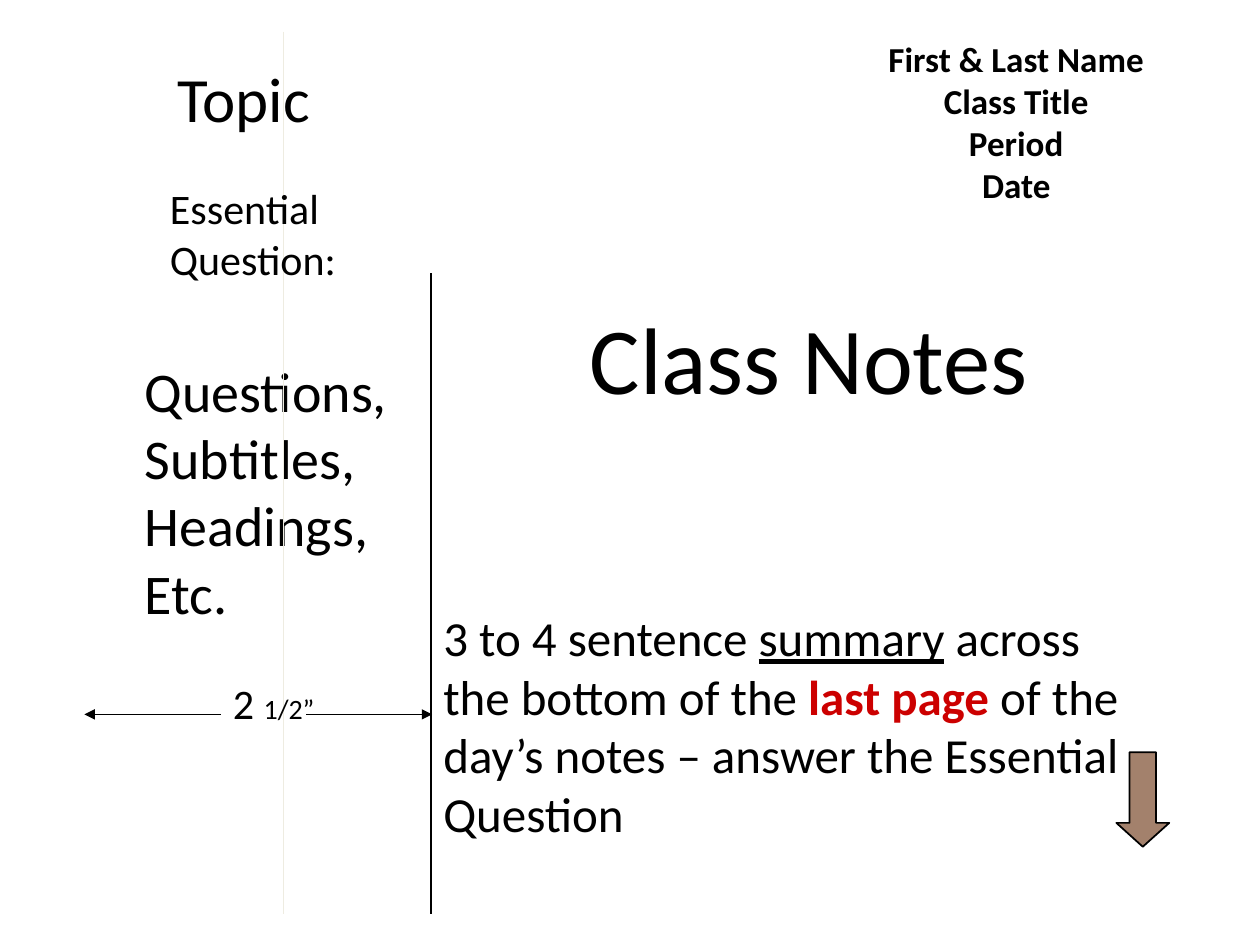
from lxml.etree import SubElement
from pptx import Presentation
from pptx.dml.color import RGBColor
from pptx.enum.shapes import MSO_CONNECTOR, MSO_SHAPE
from pptx.enum.text import MSO_ANCHOR, MSO_AUTO_SIZE, PP_ALIGN
from pptx.oxml.ns import qn
from pptx.util import Pt

EMU_PER_PX = 9144
FONT = "Calibri"
BLACK, RED, BROWN, CREAM, WHITE = "000000", "CC0000", "A3816C", "EEECE1", "FFFFFF"


def px(length):
    """Turn pixels, 100 to the inch, into EMU."""
    return length * EMU_PER_PX


def color(hex_code):
    """Return the colour for a hex string."""
    return RGBColor.from_string(hex_code)


def write_text(holder, paragraphs, size, bold=False, align=PP_ALIGN.LEFT, wrap=True):
    """Write paragraphs, each a list of (text, overrides) runs, into a shape."""
    frame = holder.text_frame
    frame.word_wrap = wrap
    frame.auto_size = MSO_AUTO_SIZE.SHAPE_TO_FIT_TEXT
    frame.vertical_anchor = MSO_ANCHOR.TOP
    for index, runs in enumerate(paragraphs):
        paragraph = frame.add_paragraph() if index else frame.paragraphs[0]
        paragraph.alignment = align
        for text, overrides in runs:
            run = paragraph.add_run()
            run.text = text
            font = run.font
            font.name = FONT
            font.size = Pt(overrides.get("size", size))
            font.bold = overrides.get("bold", bold)
            font.underline = overrides.get("underline", False)
            font.color.rgb = color(overrides.get("color", BLACK))


def plain(*lines):
    """Return one unstyled paragraph for each line."""
    return [[(line, {})] for line in lines]


def add_text(slide, box, paragraphs, size, **text_format):
    """Add a text box with formatted paragraphs."""
    label = slide.shapes.add_textbox(*map(px, box))
    write_text(label, paragraphs, size, **text_format)


def set_title(slide, box, text, size):
    """Move and format the title placeholder."""
    title = slide.shapes.title
    title.left, title.top, title.width, title.height = map(px, box)
    write_text(title, plain(text), size, wrap=False)


def add_line(slide, start, end, line_color=BLACK, arrow=False):
    """Add a thin line, with an arrowhead at its end if asked."""
    line = slide.shapes.add_connector(MSO_CONNECTOR.STRAIGHT, *map(px, start + end))
    line.line.color.rgb = color(line_color)
    line.line.width = Pt(0.75)
    if arrow:
        SubElement(line.line._get_or_add_ln(), qn("a:tailEnd"), type="triangle")
    SubElement(line._element.spPr, qn("a:effectLst"))


def add_down_arrow(slide, box):
    """Add the brown block arrow that points to the page bottom."""
    arrow = slide.shapes.add_shape(MSO_SHAPE.DOWN_ARROW, *map(px, box))
    arrow.shadow.inherit = False
    arrow.adjustments[0] = 0.5
    arrow.adjustments[1] = 0.45
    arrow.fill.solid()
    arrow.fill.fore_color.rgb = color(BROWN)
    arrow.line.color.rgb = color(BLACK)
    arrow.line.width = Pt(1)


def main():
    """Build the note-taking layout slide."""
    deck = Presentation()
    deck.slide_width, deck.slide_height = px(1000), px(750)
    slide = deck.slides.add_slide(deck.slide_layouts[5])
    slide.background.fill.solid()
    slide.background.fill.fore_color.rgb = color(WHITE)

    heading = plain("First & Last Name", "Class Title", "Period", "Date")
    cues = plain("Questions,", "Subtitles,", "Headings,", "Etc.")
    margin_width = [[("2 ", {}), ("1/2”", {"size": 16})]]
    summary = [
        [("3 to 4 sentence ", {}), ("summary", {"underline": True}), (" across", {})],
        [
            ("the bottom of the ", {}),
            ("last page", {"color": RED, "bold": True}),
            (" of the day’s notes – answer the Essential Question", {}),
        ],
    ]

    set_title(slide, (458, 233, 424, 100), "Class Notes", 54)
    add_text(slide, (667, 25, 279, 143), heading, 20, bold=True, align=PP_ALIGN.CENTER)
    add_line(slide, (342, 217), (342, 725))
    add_text(slide, (131, 42, 142, 70), plain("Topic"), 36, wrap=False)
    add_text(slide, (105, 278, 215, 256), cues, 32, wrap=False)
    add_down_arrow(slide, (886, 597, 42, 75))
    add_line(slide, (225, 25), (225, 725), line_color=CREAM)
    add_text(slide, (175, 533, 86, 50), margin_width, 24, wrap=False)
    add_line(slide, (243, 567), (343, 567), arrow=True)
    add_line(slide, (175, 567), (67, 567), arrow=True)
    add_text(slide, (342, 477, 641, 199), summary, 28)
    add_text(slide, (125, 140, 199, 91), plain("Essential Question:"), 24)

    deck.save("out.pptx")


if __name__ == "__main__":
    main()
